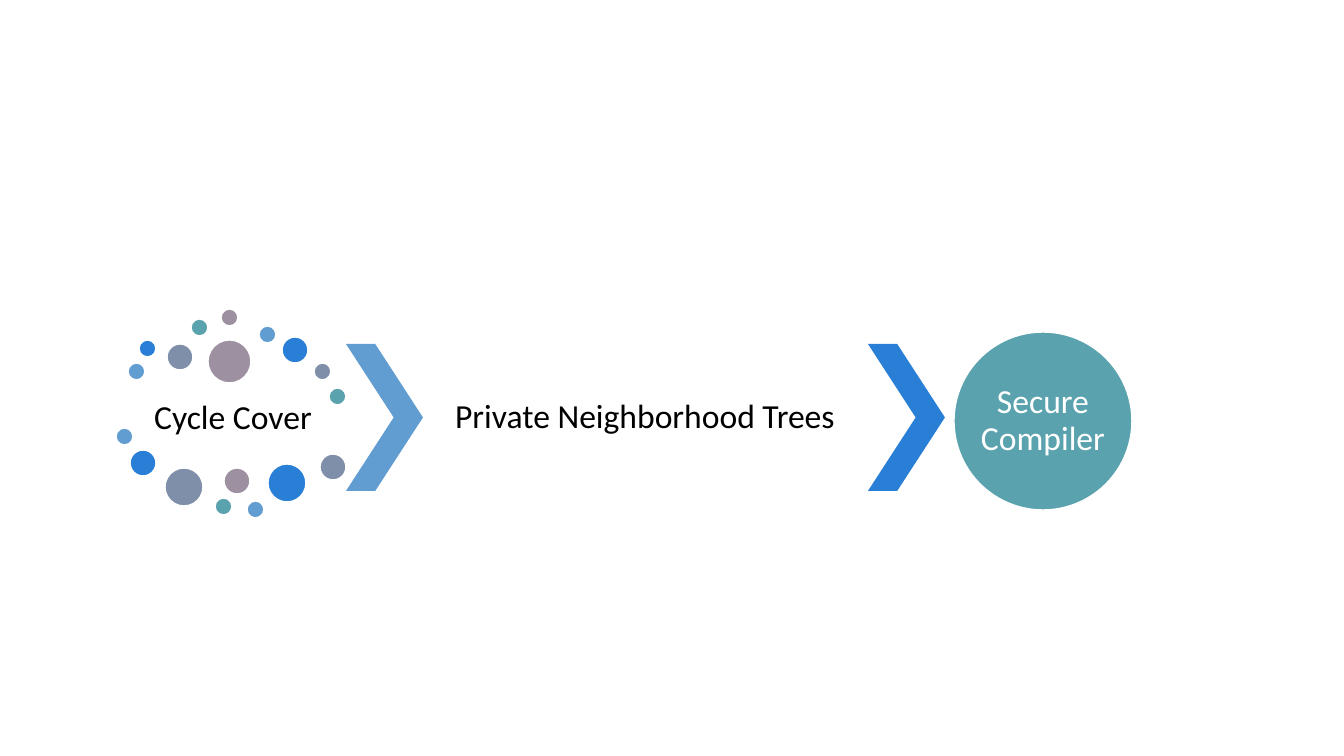
from pptx import Presentation
from pptx.dml.color import RGBColor
from pptx.enum.shapes import MSO_SHAPE
from pptx.enum.text import MSO_ANCHOR, PP_ALIGN
from pptx.util import Emu, Pt

# Content: lengths in px
SLIDE_SIZE = (1344, 756)
EMU_PER_PX = 914400 / 100.8
FONT = "Calibri"
BLACK, WHITE = "000000", "FFFFFF"
SKY, BLUE, SLATE, TEAL, MAUVE = "629DD1", "297FD5", "7F8FA9", "5AA2AE", "9D90A0"
DOT_COLORS = [SKY, BLUE, SLATE, TEAL, MAUVE]

# Dots around the first step: left, top, diameter; colours repeat in order
DOTS = [
    (128, 363, 17), (139, 340, 17), (167, 344, 26), (191, 319, 17), (221, 309, 17),
    (259, 326, 17), (282, 337, 26), (314, 363, 17), (329, 388, 17), (208, 340, 43),
    (116, 428, 17), (130, 450, 26), (165, 468, 38), (215, 498, 17), (224, 468, 26),
    (247, 501, 17), (268, 464, 38), (320, 454, 26),
]
LABELS = [
    ("Cycle Cover", (128, 384, 210, 70)),
    ("Private Neighborhood Trees", (422, 344, 446, 147)),
]
CHEVRONS = [(346, SKY), (868, BLUE)]
CHEVRON_TOP, CHEVRON_WIDTH, CHEVRON_HEIGHT = 344, 77, 147
RESULT = ("Secure Compiler", (954, 332, 178, 178))


def px(length):
    return Emu(round(length * EMU_PER_PX))


def color(value):
    return RGBColor.from_string(value)


def add_filled(page, kind, bounds, fill, outline=None):
    shape = page.shapes.add_shape(kind, *map(px, bounds))
    shape.shadow.inherit = False
    shape.fill.solid()
    shape.fill.fore_color.rgb = color(fill)
    if outline:
        shape.line.color.rgb = color(outline)
        shape.line.width = Pt(1)
    else:
        shape.line.fill.background()
    return shape


def write(shape, text, text_color, inset):
    frame = shape.text_frame
    frame.text = text
    frame.word_wrap = True
    frame.vertical_anchor = MSO_ANCHOR.MIDDLE
    frame.margin_left = frame.margin_right = px(inset)
    frame.margin_top = frame.margin_bottom = px(inset)
    para = frame.paragraphs[0]
    para.alignment = PP_ALIGN.CENTER
    para.line_spacing = 0.9
    font = para.runs[0].font
    font.name, font.size = FONT, Pt(24)
    font.color.rgb = color(text_color)


def main():
    deck = Presentation()
    deck.slide_width, deck.slide_height = map(px, SLIDE_SIZE)
    page = deck.slides.add_slide(deck.slide_layouts[6])

    # Ring of dots
    for index, (left, top, diameter) in enumerate(DOTS):
        fill = DOT_COLORS[index % len(DOT_COLORS)]
        add_filled(page, MSO_SHAPE.OVAL, (left, top, diameter, diameter), fill, WHITE)

    # Step labels
    for text, bounds in LABELS:
        box = page.shapes.add_textbox(*map(px, bounds))
        write(box, text, BLACK, 3)

    # Chevrons between the steps
    for left, fill in CHEVRONS:
        bounds = (left, CHEVRON_TOP, CHEVRON_WIDTH, CHEVRON_HEIGHT)
        chevron = add_filled(page, MSO_SHAPE.CHEVRON, bounds, fill)
        chevron.adjustments[0] = 0.62

    # Final step
    text, bounds = RESULT
    circle = add_filled(page, MSO_SHAPE.OVAL, bounds, TEAL, WHITE)
    write(circle, text, WHITE, 0)

    deck.save("out.pptx")


if __name__ == "__main__":
    main()
